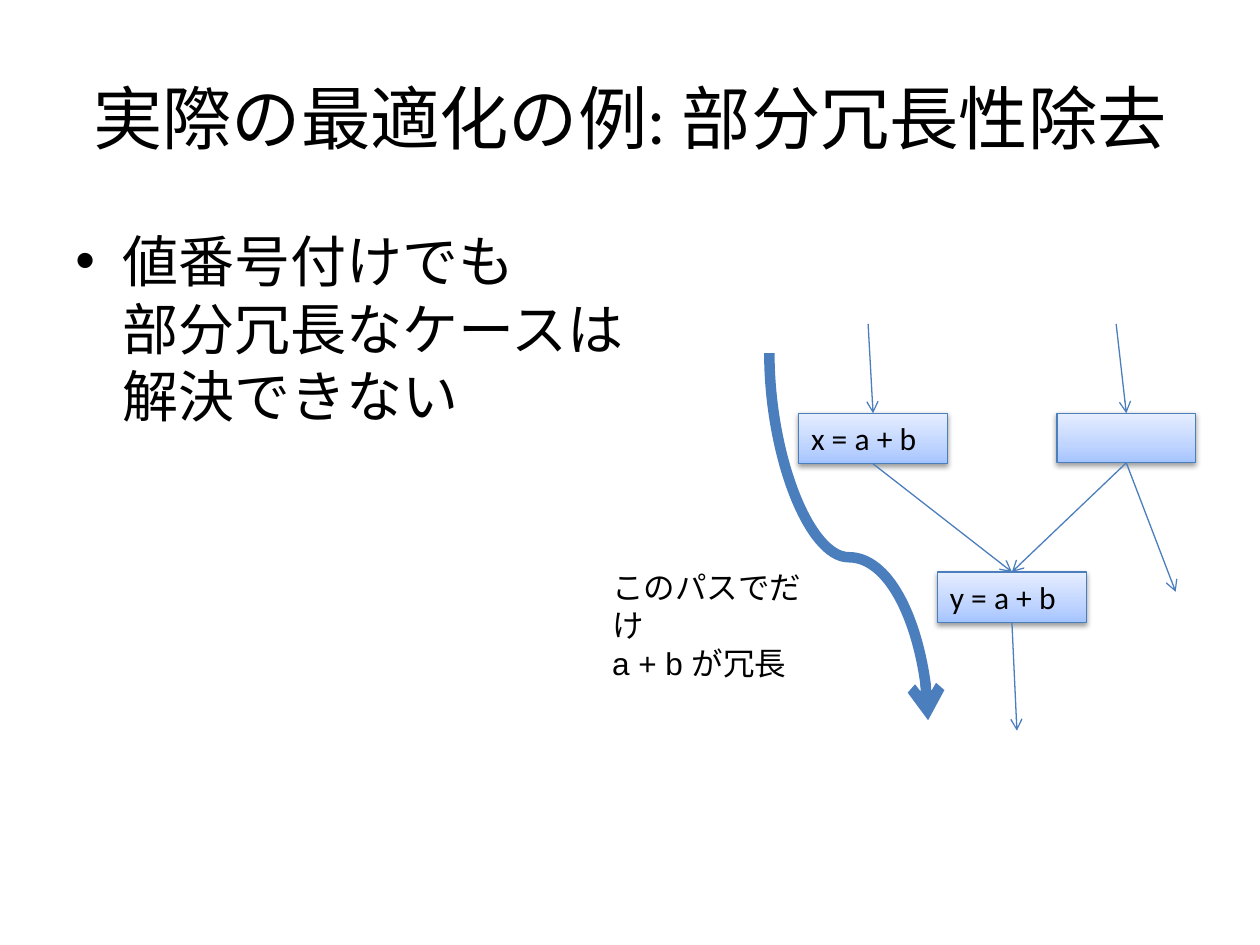
import copy

import pptx
import pptx.dml.color
import pptx.enum.shapes
import pptx.enum.text
import pptx.oxml
import pptx.oxml.ns
import pptx.util

Cm, Pt = pptx.util.Cm, pptx.util.Pt
ANCHOR = pptx.enum.text.MSO_ANCHOR
ALIGN = pptx.enum.text.PP_ALIGN
CONNECTOR = pptx.enum.shapes.MSO_CONNECTOR
COLORS = {"text": "000000", "line": "4B7EBC",
          "deep": "A4C4FF", "middle": "BFD4FF", "pale": "E6EEFF"}
NAMESPACE = pptx.oxml.ns.nsdecls("a")


def color(name):
    return pptx.dml.color.RGBColor.from_string(COLORS[name])


def append_xml(parent, markup):
    """Append one drawing element, written without its namespace declaration."""
    tag, rest = markup.split(" ", 1)
    parent.append(pptx.oxml.parse_xml(f"{tag} {NAMESPACE} {rest}"))


def write(shape, text, size, font="Calibri", align=ALIGN.LEFT):
    frame = shape.text_frame
    frame.word_wrap = True
    frame.text = text
    for para in frame.paragraphs:
        para.alignment = align
        for span in para.runs:
            span.font.size = Pt(size)
            span.font.name = font
            span.font.color.rgb = color("text")


def add_title(page, text, left, top, width, height):
    box = page.shapes.add_textbox(Cm(left), Cm(top), Cm(width), Cm(height))
    write(box, text, 39.6, align=ALIGN.CENTER)
    box.text_frame.vertical_anchor = ANCHOR.MIDDLE


def add_bullet(page, text, left, top, width, height):
    box = page.shapes.add_textbox(Cm(left), Cm(top), Cm(width), Cm(height))
    write(box, text, 32)
    para = box.text_frame.paragraphs[0]
    para.space_before = Pt(6.4)
    properties = para._p.get_or_add_pPr()
    properties.set("marL", str(Cm(0.95)))
    properties.set("indent", str(-Cm(0.95)))
    append_xml(properties, '<a:buFont typeface="Arial"/>')
    append_xml(properties, '<a:buChar char="•"/>')


def add_block(page, text, left, top, width, height):
    """Add a basic block of the flow graph; return its top and bottom centres."""
    block = page.shapes.add_shape(pptx.enum.shapes.MSO_SHAPE.RECTANGLE,
                                  Cm(left), Cm(top), Cm(width), Cm(height))
    block.fill.gradient()
    block.fill.gradient_angle = 90
    first = block.fill.gradient_stops[0]._gs
    first.addnext(copy.deepcopy(first))
    stops = [("deep", 0), ("middle", 0.35), ("pale", 1)]
    for stop, (name, position) in zip(block.fill.gradient_stops, stops):
        stop.color.rgb = color(name)
        stop.position = position
    block.line.color.rgb = color("line")
    block.line.width = Pt(0.75)
    append_xml(block._element.spPr,
               '<a:effectLst ><a:outerShdw blurRad="40000" dist="20000" dir="5400000" '
               'rotWithShape="0"><a:srgbClr val="000000"><a:alpha val="38000"/>'
               '</a:srgbClr></a:outerShdw></a:effectLst>')
    if text:
        write(block, text, 18)
        block.text_frame.vertical_anchor = ANCHOR.TOP
    center = left + width / 2
    return (center, top), (center, top + height)


def add_arrow(page, start, end, kind=CONNECTOR.STRAIGHT, weight=0.75):
    arrow = page.shapes.add_connector(kind, *(Cm(value) for value in (*start, *end)))
    arrow.line.color.rgb = color("line")
    arrow.line.width = Pt(weight)
    append_xml(arrow.line._get_or_add_ln(), '<a:tailEnd type="arrow"/>')
    append_xml(arrow._element.spPr, "<a:effectLst />")
    return arrow


def add_path_curve(page, left, top, width, height):
    """Add the thick S curve: a mirrored curved connector turned upright."""
    curve = add_arrow(page, (left + width, top), (left, top + height), CONNECTOR.CURVE, 6)
    properties = curve._element.spPr
    properties.xfrm.set("rot", "16200000")
    guides = properties.find(pptx.oxml.ns.qn("a:prstGeom")).get_or_add_avLst()
    append_xml(guides, '<a:gd name="adj1" fmla="val 55600"/>')


def add_flow_graph(page, left, top):
    def at(x, y):
        return left + x, top + y

    x_top, x_bottom = add_block(page, "x = a + b", *at(4.01, 1.8), 3, 1.02)
    y_top, y_bottom = add_block(page, "y = a + b", *at(6.81, 5), 3, 1.02)
    empty_top, empty_bottom = add_block(page, "", *at(9.22, 1.8), 2.79, 1)
    edges = [(x_bottom, y_top), (empty_bottom, y_top), (y_bottom, at(8.41, 8.2)),
             (at(5.41, 0), x_top), (at(10.41, 0), empty_top),
             (empty_bottom, at(11.61, 5.4))]
    for start, end in edges:
        add_arrow(page, start, end)
    add_path_curve(page, *at(1.32, 2.69), 7.4, 3.2)
    x, y = at(0, 4.8)
    note = page.shapes.add_textbox(Cm(x), Cm(y), Cm(4.67), Cm(1.8))
    write(note, "このパスでだけ\na + b が冗長", 18, "Arial")


def main():
    deck = pptx.Presentation()
    deck.slide_width, deck.slide_height = Cm(25.4), Cm(19.05)
    page = deck.slides.add_slide(deck.slide_layouts[6])
    add_title(page, "実際の最適化の例: 部分冗長性除去", 1.27, 0.76, 22.86, 3.18)
    add_bullet(page, "値番号付けでも\v部分冗長なケースは\v解決できない",
               1.27, 4.45, 22.86, 12.57)
    add_flow_graph(page, 12.09, 6.53)
    deck.save("out.pptx")


if __name__ == "__main__":
    main()
